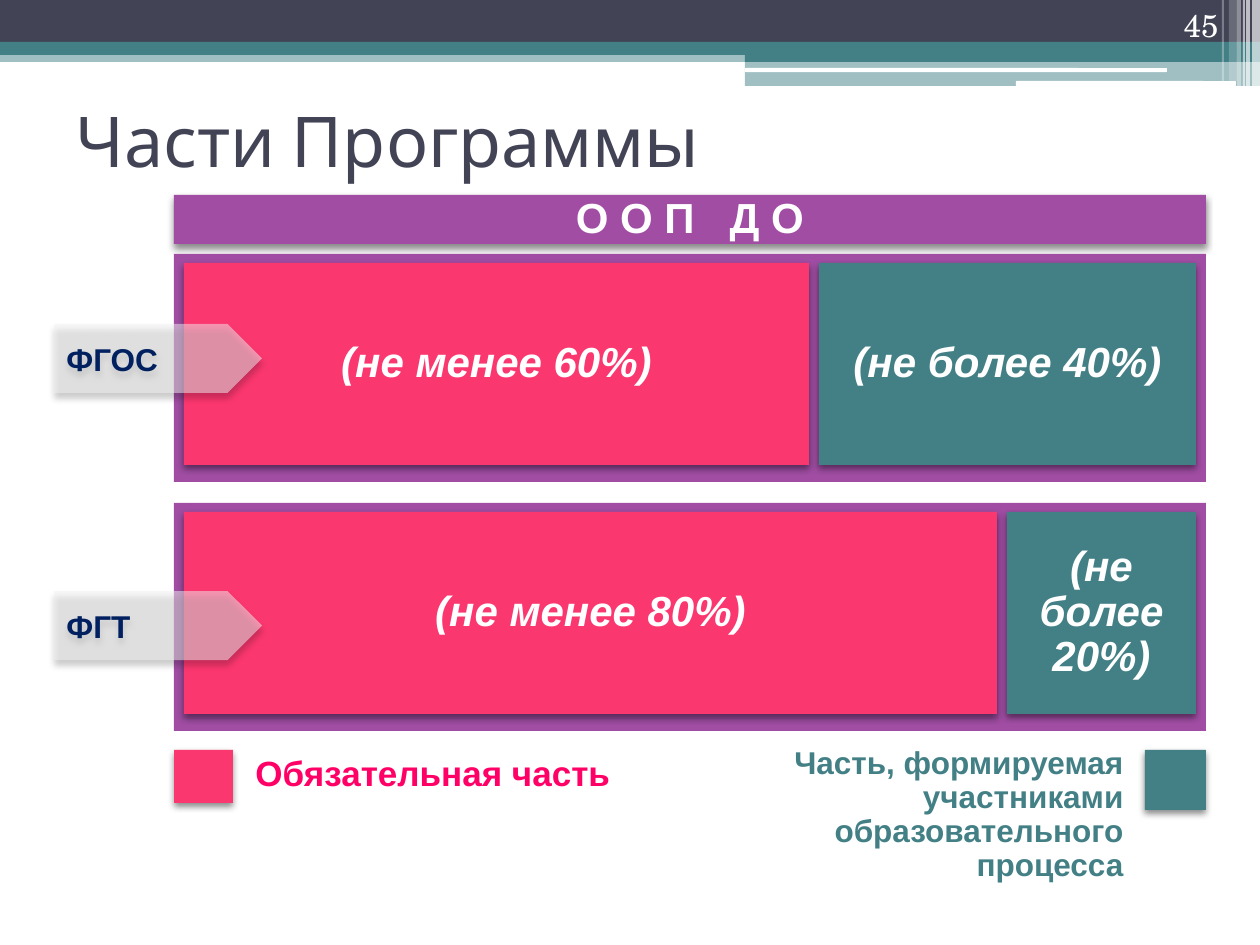
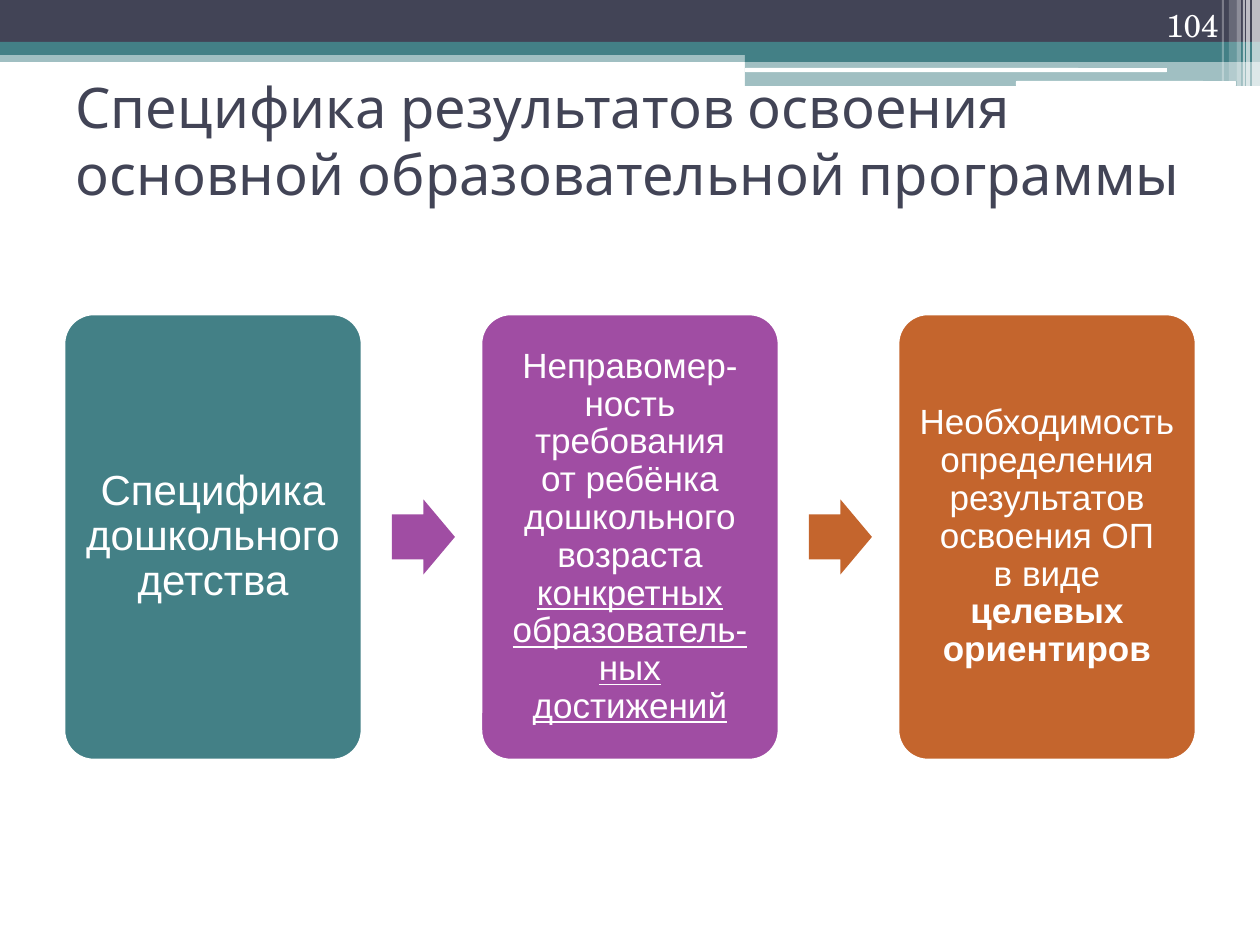
from lxml import etree
from pptx import Presentation
from pptx import util as u
from pptx.dml.color import RGBColor
from pptx.enum import shapes, text
from pptx.oxml.ns import qn

SCALE = u.Inches(1) / 126
SLIDE_SIZE = (1260, 945)

WHITE = RGBColor(0xFF, 0xFF, 0xFF)
SLATE = RGBColor(0x42, 0x44, 0x56)
TEAL = RGBColor(0x43, 0x80, 0x86)
PURPLE = RGBColor(0xA0, 0x4D, 0xA3)
PINK = RGBColor(0xFB, 0x37, 0x6F)
CRIMSON = RGBColor(0xFF, 0x00, 0x66)
ORANGE = RGBColor(0xC4, 0x65, 0x2D)
PALE = RGBColor(0xF2, 0xF2, 0xF2)
NAVY = RGBColor(0x00, 0x20, 0x60)

BODY_FONT = "Arial"
TITLE_FONT = "Karla"
NUMBER_FONT = "TeX Gyre Schola"

RECTANGLE = shapes.MSO_SHAPE.RECTANGLE
ROUNDED = shapes.MSO_SHAPE.ROUNDED_RECTANGLE
LEFT, CENTER, RIGHT = text.PP_ALIGN.LEFT, text.PP_ALIGN.CENTER, text.PP_ALIGN.RIGHT
TOP, MIDDLE, BOTTOM = (text.MSO_ANCHOR.TOP, text.MSO_ANCHOR.MIDDLE,
                       text.MSO_ANCHOR.BOTTOM)

TITLE_BOX = (63, 66, 1134, 148)
NUMBER_BOX = (1126, 0, 105, 50)

BANDS = [
    (RECTANGLE, (0, 50, 1260, 12), TEAL, 50),
    (RECTANGLE, (0, 0, 1260, 43), SLATE, 100),
    (RECTANGLE, (0, 42, 1260, 13), TEAL, 100),
    (RECTANGLE, (745, 49, 515, 13), TEAL, 100),
    (RECTANGLE, (745, 61, 515, 25), TEAL, 50),
    (ROUNDED, (745, 68, 422, 4), WHITE, 100),
    (ROUNDED, (1016, 81, 220, 5), WHITE, 100),
]
STRIPES = [
    (1252, 8, 86, 65), (1246, 4, 86, 65), (1243, 2, 86, 60),
    (1237, 4, 86, 40), (1229, 8, 81, 20), (1222, 2, 81, 30),
]

PARTS_TITLE = "Части Программы"
PARTS_BANNER = "О О П   Д О"
PARTS_ROWS = [
    {"top": 254, "label": "ФГОС", "label_top": 324, "required_width": 625,
     "required": "(не менее 60%)", "formed": "(не более 40%)"},
    {"top": 503, "label": "ФГТ", "label_top": 591, "required_width": 813,
     "required": "(не менее 80%)", "formed": "(не более 20%)"},
]
FRAME_LEFT, FRAME_WIDTH, FRAME_HEIGHT = 174, 1032, 228
BAR_INSET, BAR_GAP, BAR_HEIGHT = 10, 10, 202
LEGEND_REQUIRED = ["Обязательная часть"]
LEGEND_FORMED = ["Часть, формируемая", "участниками", "образовательного", "процесса"]
LEGEND_CHIPS = [((174, 750, 59, 53), PINK), ((1145, 750, 61, 60), TEAL)]

RESULTS_TITLE = "Специфика результатов освоения основной образовательной программы"
RESULTS_CARDS = [
    {"text": "Специфика дошкольного детства", "color": TEAL, "size": 24, "margin": 12},
    {"text": "Неправомер-ность требования\vот ребёнка дошкольного возраста ",
     "underlined": "конкретных образователь-ных достижений",
     "color": PURPLE, "size": 20, "margin": 10},
    {"text": "Необходимость определения результатов освоения ОП\vв виде\v",
     "bold": "целевых ориентиров", "color": ORANGE, "size": 20, "margin": 10},
]
CARD_LEFT, CARD_TOP, CARD_WIDTH, CARD_HEIGHT, CARD_STEP = 64, 314, 298, 446, 417
ARROW_WIDTH, ARROW_HEIGHT, ARROW_BEFORE_CARD = 63, 75, 89


def px(value):
    return u.Emu(round(value * SCALE))


def place(box):
    return [px(value) for value in box]


def set_alpha(parent, percent):
    color = parent.find(".//" + qn("a:srgbClr"))
    etree.SubElement(color, qn("a:alpha"), val=str(percent * 1000))


def add_shadow(shape, alpha, distance):
    effects = shape._element.spPr.find(qn("a:effectLst"))
    outer = etree.SubElement(effects, qn("a:outerShdw"), blurRad=str(u.Pt(4)),
                             dist=str(u.Pt(distance)), dir="5400000",
                             algn="ctr", rotWithShape="0")
    etree.SubElement(outer, qn("a:srgbClr"), val="000000")
    set_alpha(outer, alpha)


def add_block(slide, kind, box, color, alpha=100):
    shape = slide.shapes.add_shape(kind, *place(box))
    shape.shadow.inherit = False
    shape.fill.solid()
    shape.fill.fore_color.rgb = color
    shape.line.fill.background()
    if alpha < 100:
        set_alpha(shape._element.spPr, alpha)
    return shape


def add_shaded_block(slide, box, color):
    shape = add_block(slide, RECTANGLE, box, color)
    add_shadow(shape, 45, 2)
    return shape


def format_text(shape, size, color, align=CENTER, anchor=MIDDLE, font=BODY_FONT,
                bold=None, italic=None, spacing=0.9, margin=None):
    frame = shape.text_frame
    frame.word_wrap = True
    frame.auto_size = text.MSO_AUTO_SIZE.NONE
    frame.vertical_anchor = anchor
    if margin is not None:
        frame.margin_left = frame.margin_right = px(margin)
        frame.margin_top = frame.margin_bottom = px(margin)
    for paragraph in frame.paragraphs:
        paragraph.alignment = align
        paragraph.line_spacing = spacing
        for run in paragraph.runs:
            run.font.name = font
            run.font.size = u.Pt(size)
            run.font.color.rgb = color
            if bold is not None:
                run.font.bold = bold
            if italic is not None:
                run.font.italic = italic


def add_text(slide, box, lines, size, color, **style):
    shape = slide.shapes.add_textbox(*place(box))
    shape.text_frame.text = "\n".join(lines)
    format_text(shape, size, color, **style)


def move_bands_to_layout(slide, layout):
    for placeholder in list(layout.placeholders):
        if placeholder.placeholder_format.type != shapes.PP_PLACEHOLDER.TITLE:
            placeholder._element.getparent().remove(placeholder._element)
    stripes = [(RECTANGLE, (left, 0, width, height), WHITE, alpha)
               for left, width, height, alpha in STRIPES]
    for band in BANDS + stripes:
        layout.shapes._spTree.append(add_block(slide, *band)._element)


def add_slide(presentation, layout, title, title_size, number):
    slide = presentation.slides.add_slide(layout)
    heading = slide.shapes.title
    heading.left, heading.top, heading.width, heading.height = place(TITLE_BOX)
    heading.text_frame.text = title
    format_text(heading, title_size, SLATE, align=LEFT, font=TITLE_FONT, spacing=1.0)
    if number == 45:
        move_bands_to_layout(slide, layout)
    add_text(slide, NUMBER_BOX, [str(number)], 18, WHITE, align=RIGHT,
             anchor=BOTTOM, font=NUMBER_FONT, spacing=1.0)
    return slide


def add_parts_row(slide, row):
    add_block(slide, RECTANGLE, (FRAME_LEFT, row["top"], FRAME_WIDTH, FRAME_HEIGHT), PURPLE)
    left = FRAME_LEFT + BAR_INSET
    required = row["required_width"]
    formed = FRAME_WIDTH - 2 * BAR_INSET - BAR_GAP - required
    bars = [(left, required, PINK, row["required"]),
            (left + required + BAR_GAP, formed, TEAL, row["formed"])]
    for bar_left, width, color, words in bars:
        bar = add_shaded_block(slide, (bar_left, row["top"] + 9, width, BAR_HEIGHT), color)
        bar.text_frame.text = words
        format_text(bar, 24, WHITE, bold=True, italic=True, margin=21)
    label = add_block(slide, shapes.MSO_SHAPE.PENTAGON,
                      (54, row["label_top"], 208, 69), PALE, 50)
    add_shadow(label, 40, 3)
    label.text_frame.text = row["label"]
    format_text(label, 18, NAVY, align=LEFT, bold=True, spacing=1.0)


def fill_parts_slide(slide):
    banner = add_shaded_block(slide, (FRAME_LEFT, 195, FRAME_WIDTH, 49), PURPLE)
    banner.text_frame.text = PARTS_BANNER
    format_text(banner, 24, WHITE, bold=True, margin=14)
    for row in PARTS_ROWS:
        add_parts_row(slide, row)
    for box, color in LEGEND_CHIPS:
        add_shaded_block(slide, box, color)
    add_text(slide, (243, 750, 407, 50), LEGEND_REQUIRED, 20, CRIMSON,
             align=LEFT, anchor=TOP, bold=True)
    add_text(slide, (769, 741, 367, 150), LEGEND_FORMED, 18, TEAL,
             align=RIGHT, anchor=TOP, bold=True)


def add_card(slide, left, card):
    shape = add_block(slide, ROUNDED, (left, CARD_TOP, CARD_WIDTH, CARD_HEIGHT), card["color"])
    shape.adjustments[0] = 0.1
    shape.line.color.rgb = WHITE
    shape.line.width = u.Pt(1.5)
    paragraph = shape.text_frame.paragraphs[0]
    paragraph.text = card["text"]
    for emphasis in ("underlined", "bold"):
        if emphasis in card:
            run = paragraph.add_run()
            run.text = card[emphasis]
            run.font.underline = emphasis == "underlined"
            run.font.bold = emphasis == "bold"
    format_text(shape, card["size"], WHITE, margin=card["margin"])


def fill_results_slide(slide):
    arrow_top = CARD_TOP + (CARD_HEIGHT - ARROW_HEIGHT) / 2
    for index, card in enumerate(RESULTS_CARDS):
        left = CARD_LEFT + index * CARD_STEP
        if index:
            arrow = add_block(slide, shapes.MSO_SHAPE.RIGHT_ARROW,
                              (left - ARROW_BEFORE_CARD, arrow_top, ARROW_WIDTH, ARROW_HEIGHT),
                              card["color"])
            arrow.adjustments[0] = 0.6
        add_card(slide, left, card)


def main():
    presentation = Presentation()
    presentation.slide_width, presentation.slide_height = place(SLIDE_SIZE)
    layout = presentation.slide_layouts[5]
    fill_parts_slide(add_slide(presentation, layout, PARTS_TITLE, 40, 45))
    fill_results_slide(add_slide(presentation, layout, RESULTS_TITLE, 32, 104))
    presentation.save("out.pptx")


if __name__ == "__main__":
    main()
